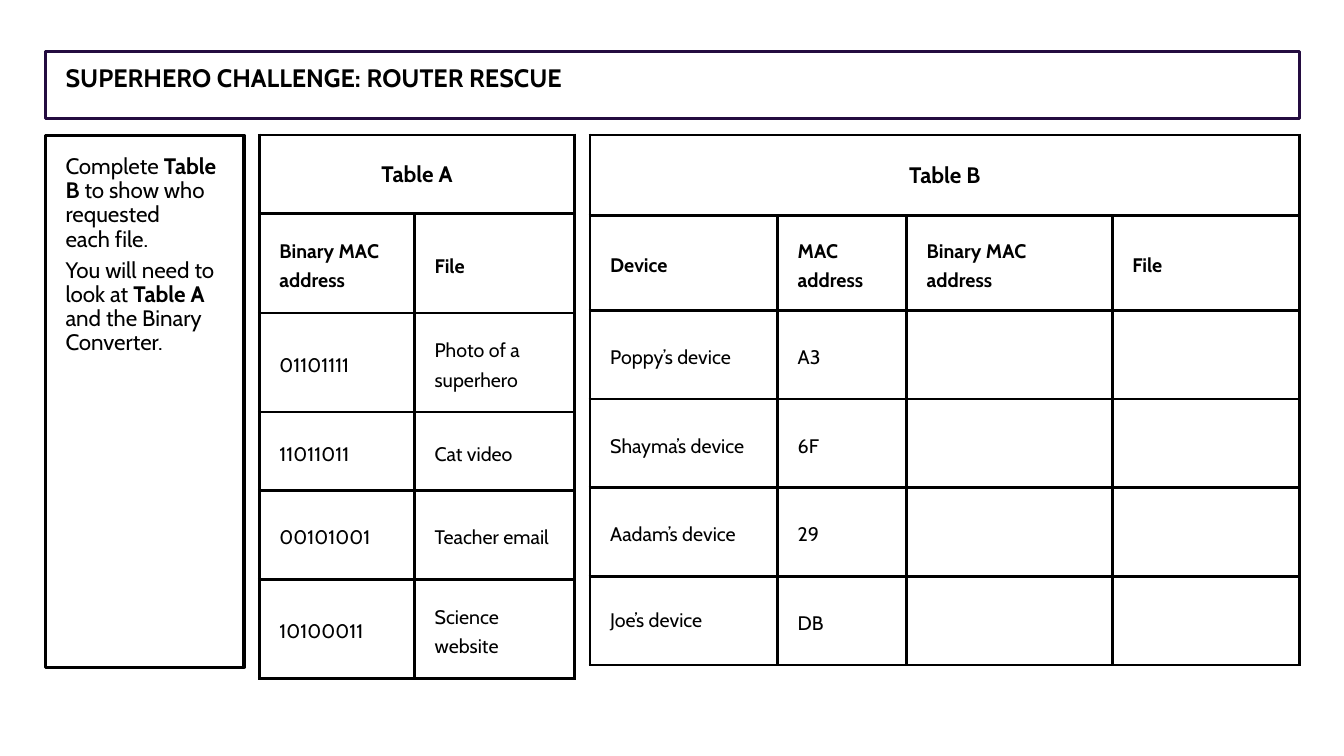
from dataclasses import dataclass

from lxml import etree
from pptx import Presentation
from pptx import util as u
from pptx.dml.color import RGBColor
from pptx.enum import shapes, text
from pptx.oxml import ns

BLACK = RGBColor(0x00, 0x00, 0x00)
WHITE = RGBColor(0xFF, 0xFF, 0xFF)
PURPLE = RGBColor(0x24, 0x0C, 0x40)
FONT = "Cabin"
BORDER = u.Pt(2.25)
WIDE, NARROW = u.Inches(0.2), u.Inches(0.08)
SLIDE_W, SLIDE_H = u.Inches(13.33), u.Inches(7.5)

# Shares of the slide's width and height, in percent
LEFT, GAP, CONTENT_W = 3.38, 1.13, 93.32
TITLE_TOP, TITLE_H = 6.8, 8.93
BODY_TOP, BODY_H = 17.87, 70.4
INSTRUCTIONS_W = 14.78


@dataclass(frozen=True)
class Piece:
    words: str
    bold: bool = False


@dataclass(frozen=True)
class Grid:
    """A titled table; columns and rows are percentages of the slide."""
    heading: str
    columns: tuple[float, ...]
    rows: tuple[float, ...]
    entries: tuple[tuple[str, ...], ...]
    body_inset: int
    single_spaced: tuple[str, ...] = ()


TABLE_A = Grid(
    "Table A",
    (11.55, 11.93),
    (10.4, 12.53, 12.53, 10.4, 11.73, 12.53),
    (
        ("Binary MAC address", "File"),
        ("01101111", "Photo of a superhero"),
        ("11011011", "Cat video"),
        ("00101001", "Teacher email"),
        ("10100011", "Science website"),
    ),
    WIDE,
)
TABLE_B = Grid(
    "Table B",
    (13.95, 9.6, 15.3, 13.95),
    (10.67, 12.53) + (11.73,) * 4,
    (
        ("Device", "MAC address", "Binary MAC address", "File"),
        ("Poppy’s device", "A3", "", ""),
        ("Shayma’s device", "6F", "", ""),
        ("Aadam’s device", "29", "", ""),
        ("Joe’s device", "DB", "", ""),
    ),
    NARROW,
    ("Joe’s device",),
)
INSTRUCTIONS = (
    (Piece("Complete "), Piece("Table B", True),
     Piece(" to show who requested\veach file.")),
    (Piece("You will need to look at "), Piece("Table A", True),
     Piece(" and the Binary Converter.")),
)


def across(share: float) -> int:
    return round(SLIDE_W * share / 100)


def down(share: float) -> int:
    return round(SLIDE_H * share / 100)


def apply(target, **formats) -> None:
    for name, value in formats.items():
        setattr(target, name, value)


def write(paragraph, pieces: tuple[Piece, ...], size: float) -> None:
    """Add the pieces as runs; a vertical tab marks a line break."""
    for piece in pieces:
        for number, line in enumerate(piece.words.split("\v")):
            if number:
                paragraph.add_line_break()
            run = paragraph.add_run()
            run.text = line
            apply(run.font, name=FONT, size=u.Pt(size), bold=piece.bold)
            run.font.color.rgb = BLACK


def frame_panel(panel, outline: RGBColor, top_inset: int):
    """Give a panel its white fill, outline and insets; return its text frame."""
    panel.fill.solid()
    panel.fill.fore_color.rgb = WHITE
    panel.line.color.rgb = outline
    panel.line.width = BORDER
    apply(panel.text_frame, margin_left=WIDE, margin_top=top_inset,
          margin_right=WIDE, margin_bottom=WIDE, word_wrap=True,
          auto_size=text.MSO_AUTO_SIZE.NONE,
          vertical_anchor=text.MSO_ANCHOR.TOP)
    return panel.text_frame


def add_title(slide) -> None:
    title = slide.shapes.title
    apply(title, left=across(LEFT), top=down(TITLE_TOP),
          width=across(CONTENT_W), height=down(TITLE_H))
    heading = frame_panel(title, PURPLE, u.Inches(0.14)).paragraphs[0]
    apply(heading, alignment=text.PP_ALIGN.LEFT, line_spacing=0.9)
    write(heading, (Piece("SUPERHERO CHALLENGE: ROUTER RESCUE", True),), 18)


def add_instructions(slide) -> None:
    panel = slide.shapes.add_shape(
        shapes.MSO_SHAPE.RECTANGLE, across(LEFT), down(BODY_TOP),
        across(INSTRUCTIONS_W), down(BODY_H))
    panel.shadow.inherit = False
    frame = frame_panel(panel, BLACK, WIDE)
    for number, pieces in enumerate(INSTRUCTIONS):
        paragraph = frame.add_paragraph() if number else frame.paragraphs[0]
        apply(paragraph, alignment=text.PP_ALIGN.LEFT, line_spacing=0.9,
              space_before=u.Pt(5 if number else 0))
        write(paragraph, pieces, 16)


def style_cell(cell, vertical_inset: int) -> None:
    properties = cell._tc.get_or_add_tcPr()
    for side in ("a:lnL", "a:lnR", "a:lnT", "a:lnB"):
        line = etree.SubElement(properties, ns.qn(side), w=str(BORDER))
        fill = etree.SubElement(line, ns.qn("a:solidFill"))
        etree.SubElement(fill, ns.qn("a:srgbClr"), val=str(BLACK))
    cell.fill.solid()
    cell.fill.fore_color.rgb = WHITE
    apply(cell, margin_left=WIDE, margin_right=WIDE,
          margin_top=vertical_inset, margin_bottom=vertical_inset,
          vertical_anchor=text.MSO_ANCHOR.MIDDLE)


def add_grid(slide, grid: Grid, left: float) -> None:
    table = slide.shapes.add_table(
        len(grid.rows), len(grid.columns), across(left), down(BODY_TOP),
        across(sum(grid.columns)), down(sum(grid.rows))).table
    apply(table, first_row=False, horz_banding=False)
    for column, share in zip(table.columns, grid.columns):
        column.width = across(share)
    for row, share in zip(table.rows, grid.rows):
        row.height = down(share)

    for cell in table.rows[0].cells:
        style_cell(cell, NARROW)
    heading = table.cell(0, 0)
    heading.merge(table.cell(0, len(grid.columns) - 1))
    paragraph = heading.text_frame.paragraphs[0]
    paragraph.alignment = text.PP_ALIGN.CENTER
    write(paragraph, (Piece(grid.heading, True),), 16)

    for row_number, entries in enumerate(grid.entries, start=1):
        for column_number, entry in enumerate(entries):
            cell = table.cell(row_number, column_number)
            style_cell(cell, grid.body_inset)
            if entry:
                paragraph = cell.text_frame.paragraphs[0]
                if entry not in grid.single_spaced:
                    paragraph.line_spacing = u.Pt(21)
                write(paragraph, (Piece(entry, row_number == 1),), 14)


def main() -> None:
    presentation = Presentation()
    apply(presentation, slide_width=SLIDE_W, slide_height=SLIDE_H)
    slide = presentation.slides.add_slide(presentation.slide_layouts[5])
    add_title(slide)
    add_instructions(slide)
    left = LEFT + INSTRUCTIONS_W + GAP
    for grid in (TABLE_A, TABLE_B):
        add_grid(slide, grid, left)
        left += sum(grid.columns) + GAP
    presentation.save("out.pptx")


if __name__ == "__main__":
    main()
